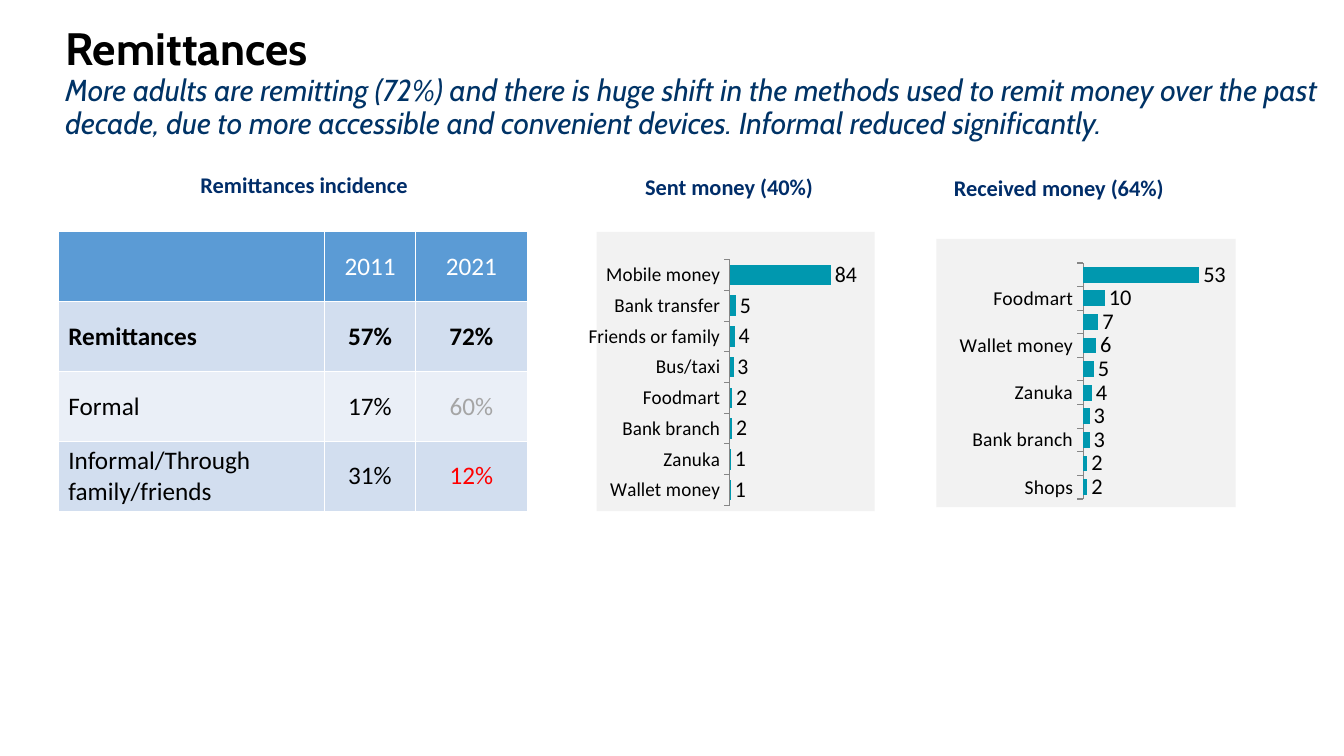
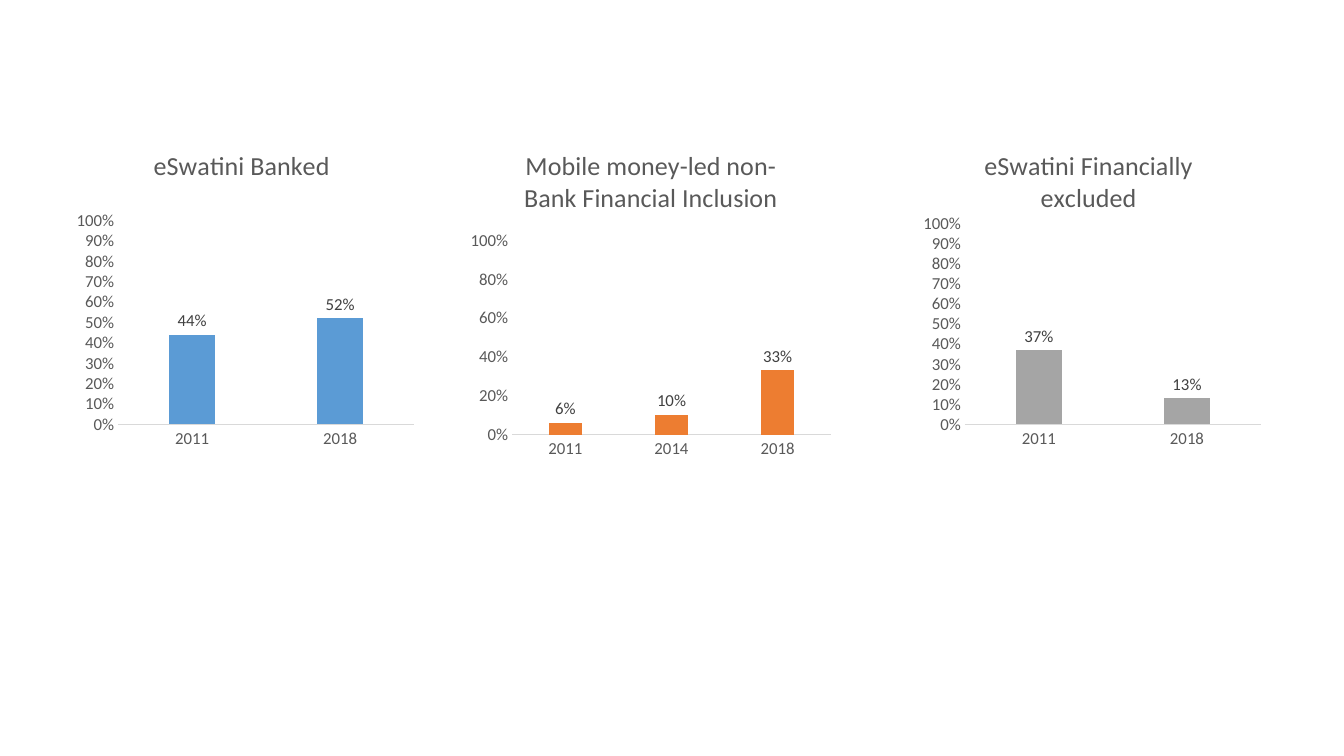
from lxml import etree
from pptx import Presentation
from pptx.chart.data import CategoryChartData
from pptx.dml.color import RGBColor
from pptx.enum.chart import XL_CHART_TYPE, XL_LABEL_POSITION, XL_TICK_MARK
from pptx.enum.text import MSO_ANCHOR, PP_ALIGN
from pptx.oxml import parse_xml
from pptx.oxml.ns import nsdecls, qn
from pptx.util import Cm, Pt

COLOURS = {
    "black": "000000", "white": "FFFFFF", "subtitle": "003366",
    "heading": "002D69", "teal": "0098AF", "panel": "F2F2F2",
    "blue": "5B9BD5", "orange": "ED7D31", "grey": "A5A5A5", "red": "FF0000",
    "band": "D2DEEF", "light band": "EAEFF7", "axis text": "595959",
    "label text": "404040", "axis line": "D9D9D9", "tick line": "868686",
}
TITLE_FONT = "Cabin"
BODY_FONT = "Calibri"


def colour(name):
    return RGBColor.from_string(COLOURS[name])


class Deck:
    """Holds the shared style and the slide being built."""

    def __init__(self):
        self.presentation = Presentation()
        self.presentation.slide_width = Cm(33.87)
        self.presentation.slide_height = Cm(19.05)
        self.slide = None

    def new_slide(self):
        self.slide = self.presentation.slides.add_slide(
            self.presentation.slide_layouts[6])

    def style(self, font, size, name, bold=False, italic=False, face=BODY_FONT):
        font.name, font.size = face, Pt(size)
        font.bold, font.italic = bold, italic
        font.color.rgb = colour(name)

    def text_box(self, left, top, width, height, text):
        box = self.slide.shapes.add_textbox(
            Cm(left), Cm(top), Cm(width), Cm(height))
        box.text_frame.word_wrap = True
        box.text_frame.text = text
        return box.text_frame

    def title(self, headline, message):
        text_frame = self.text_box(1.4, 1.24, 32.49, 1.73,
                                   headline + "\n" + message)
        text_frame.vertical_anchor = MSO_ANCHOR.MIDDLE
        for paragraph in text_frame.paragraphs:
            paragraph.line_spacing = 0.9
        first, second = text_frame.paragraphs
        self.style(first.runs[0].font, 32.4, "black", bold=True, face=TITLE_FONT)
        self.style(second.runs[0].font, 21.6, "subtitle", italic=True,
                   face=TITLE_FONT)

    def heading(self, left, top, width, text):
        paragraph = self.text_box(left, top, width, 0.94, text).paragraphs[0]
        paragraph.alignment = PP_ALIGN.CENTER
        self.style(paragraph.runs[0].font, 16, "heading", bold=True)

    # Tables
    def cell_borders(self, cell):
        properties = cell._tc.get_or_add_tcPr()
        for position, tag in enumerate(("lnL", "lnR", "lnT", "lnB")):
            line = parse_xml(
                f'<a:{tag} {nsdecls("a")} w="{Pt(1)}"><a:solidFill>'
                f'<a:srgbClr val="{COLOURS["white"]}"/></a:solidFill></a:{tag}>')
            properties.insert(position, line)

    def table(self, left, top, widths, row_height, rows, accents):
        table = self.slide.shapes.add_table(
            len(rows), len(widths), Cm(left), Cm(top),
            Cm(sum(widths)), Cm(row_height * len(rows))).table
        for column, width in zip(table.columns, widths):
            column.width = Cm(width)
        for row_index, row in enumerate(rows):
            table.rows[row_index].height = Cm(row_height)
            is_header = row_index == 0
            band = "band" if row_index % 2 else "light band"
            for column_index, text in enumerate(row):
                cell = table.cell(row_index, column_index)
                cell.fill.solid()
                cell.fill.fore_color.rgb = colour("blue" if is_header else band)
                self.cell_borders(cell)
                cell.vertical_anchor = MSO_ANCHOR.MIDDLE
                cell.margin_top = cell.margin_bottom = Cm(0.1)
                cell.text_frame.text = text
                paragraph = cell.text_frame.paragraphs[0]
                if column_index:
                    paragraph.alignment = PP_ALIGN.CENTER
                name = accents.get(text, "white" if is_header else "black")
                for run in paragraph.runs:
                    self.style(run.font, 18, name, bold=row_index == 1)

    # Charts
    def chart(self, kind, box, series_name, points, fill, gap, layout, size):
        data = CategoryChartData()
        data.categories = [category for category, value in points]
        data.add_series(series_name, [value for category, value in points])
        chart = self.slide.shapes.add_chart(
            kind, *[Cm(length) for length in box], data).chart
        self.style(chart.font, size, "black")
        chart.has_legend = False
        chart.has_title = False
        plot = chart.plots[0]
        plot.gap_width = gap
        plot.vary_by_categories = False
        plot.has_data_labels = True
        plot.data_labels.show_value = True
        plot.data_labels.position = XL_LABEL_POSITION.OUTSIDE_END
        series_fill = plot.series[0].format.fill
        series_fill.solid()
        series_fill.fore_color.rgb = colour(fill)
        chart.value_axis.has_major_gridlines = False
        chart.value_axis.minimum_scale = 0
        self.plot_layout(chart, layout)
        return chart

    def plot_layout(self, chart, layout):
        plot_area = chart._chartSpace.chart.plotArea
        for previous in plot_area.findall(qn("c:layout")):
            plot_area.remove(previous)
        element = parse_xml(f'<c:layout {nsdecls("c")}><c:manualLayout/></c:layout>')
        settings = [("layoutTarget", "inner"), ("xMode", "edge"), ("yMode", "edge")]
        settings += zip("xywh", layout)
        for tag, value in settings:
            etree.SubElement(element[0], qn("c:" + tag)).set("val", str(value))
        plot_area.insert(0, element)

    def chart_background(self, chart, name):
        chart._chartSpace.chart.addnext(parse_xml(
            f'<c:spPr {nsdecls("c", "a")}><a:solidFill>'
            f'<a:srgbClr val="{COLOURS[name]}"/></a:solidFill>'
            '<a:ln><a:noFill/></a:ln></c:spPr>'))

    def ranking_chart(self, box, points, maximum, layout):
        chart = self.chart(XL_CHART_TYPE.BAR_CLUSTERED, box, "", points,
                           "teal", 50, layout, 13.5)
        self.chart_background(chart, "panel")
        self.style(chart.plots[0].data_labels.font, 16, "black")
        chart.value_axis.maximum_scale = maximum
        chart.value_axis.visible = False
        axis = chart.category_axis
        axis.major_tick_mark = XL_TICK_MARK.OUTSIDE
        axis.format.line.color.rgb = colour("tick line")
        self.style(axis.tick_labels.font, 14, "black")

    def trend_chart(self, left, title, points, fill, step, layout):
        chart = self.chart(XL_CHART_TYPE.COLUMN_CLUSTERED,
                           (left, 3.28, 9.45, 8.43), title, points,
                           fill, 219, layout, 10)
        self.chart_background(chart, "white")
        chart.plots[0].overlap = -27
        chart.has_title = True
        chart.chart_title.include_in_layout = False
        chart.chart_title.text_frame.text = title
        run = chart.chart_title.text_frame.paragraphs[0].runs[0]
        self.style(run.font, 18.6, "axis text")
        labels = chart.plots[0].data_labels
        self.style(labels.font, 12, "label text")
        chart.value_axis.maximum_scale = 1
        chart.value_axis.major_unit = step
        for numbers in (labels, chart.value_axis.tick_labels):
            numbers.number_format = "0%"
            numbers.number_format_is_linked = False
        for axis in (chart.category_axis, chart.value_axis):
            axis.major_tick_mark = XL_TICK_MARK.NONE
            self.style(axis.tick_labels.font, 12, "axis text")
        chart.category_axis.format.line.color.rgb = colour("axis line")
        chart.category_axis.format.line.width = Pt(0.75)
        chart.value_axis.format.line.fill.background()


def remittances_slide(deck):
    deck.new_slide()
    deck.title(
        "Remittances",
        "More adults are remitting (72%) and there is huge shift in the methods "
        "used to remit money over the past decade, due to more accessible and "
        "convenient devices. Informal reduced significantly.")

    # Ways of sending and receiving, smallest first
    deck.ranking_chart(
        (14.83, 5.84, 7.21, 7.04),
        [("Wallet money", 1), ("Zanuka", 1), ("Bank branch", 2),
         ("Foodmart", 2), ("Bus/taxi", 3), ("Friends or family", 4),
         ("Bank transfer", 5), ("Mobile money", 84)],
        90, (0.48, 0.1, 0.39, 0.88))
    deck.heading(15.16, 4.24, 6.43, "Sent money (40%)")
    # Only every second bar is named
    deck.ranking_chart(
        (23.6, 6.02, 7.54, 6.76),
        [("Shops", 2), ("", 2), ("Bank branch", 3), ("", 3), ("Zanuka", 4),
         ("", 5), ("Wallet money", 6), ("", 7), ("Foodmart", 10), ("", 53)],
        60, (0.49, 0.09, 0.44, 0.88))
    deck.heading(23.47, 4.27, 6.43, "Received money (64%)")

    # Incidence by year
    deck.table(
        1.47, 5.84, (6.71, 2.29, 2.82), 1.76,
        [("", "2011", "2021"),
         ("Remittances", "57%", "72%"),
         ("Formal", "17%", "60%"),
         ("Informal/Through family/friends", "31%", "12%")],
        {"60%": "grey", "12%": "red"})
    deck.heading(1.57, 4.19, 12.19, "Remittances incidence")


def inclusion_slide(deck):
    deck.new_slide()
    deck.trend_chart(1.37, "eSwatini Banked", [("2011", 0.44), ("2018", 0.52)],
                     "blue", 0.1, (0.17, 0.27, 0.79, 0.61))
    deck.trend_chart(11.68, "Mobile money-led non-Bank Financial Inclusion",
                     [("2011", 0.06), ("2014", 0.1), ("2018", 0.33)],
                     "orange", 0.2, (0.13, 0.33, 0.85, 0.58))
    deck.trend_chart(22.71, "eSwatini Financially excluded",
                     [("2011", 0.37), ("2018", 0.13)],
                     "grey", 0.1, (0.17, 0.28, 0.79, 0.6))


def main():
    deck = Deck()
    remittances_slide(deck)
    inclusion_slide(deck)
    deck.presentation.save("out.pptx")


if __name__ == "__main__":
    main()
